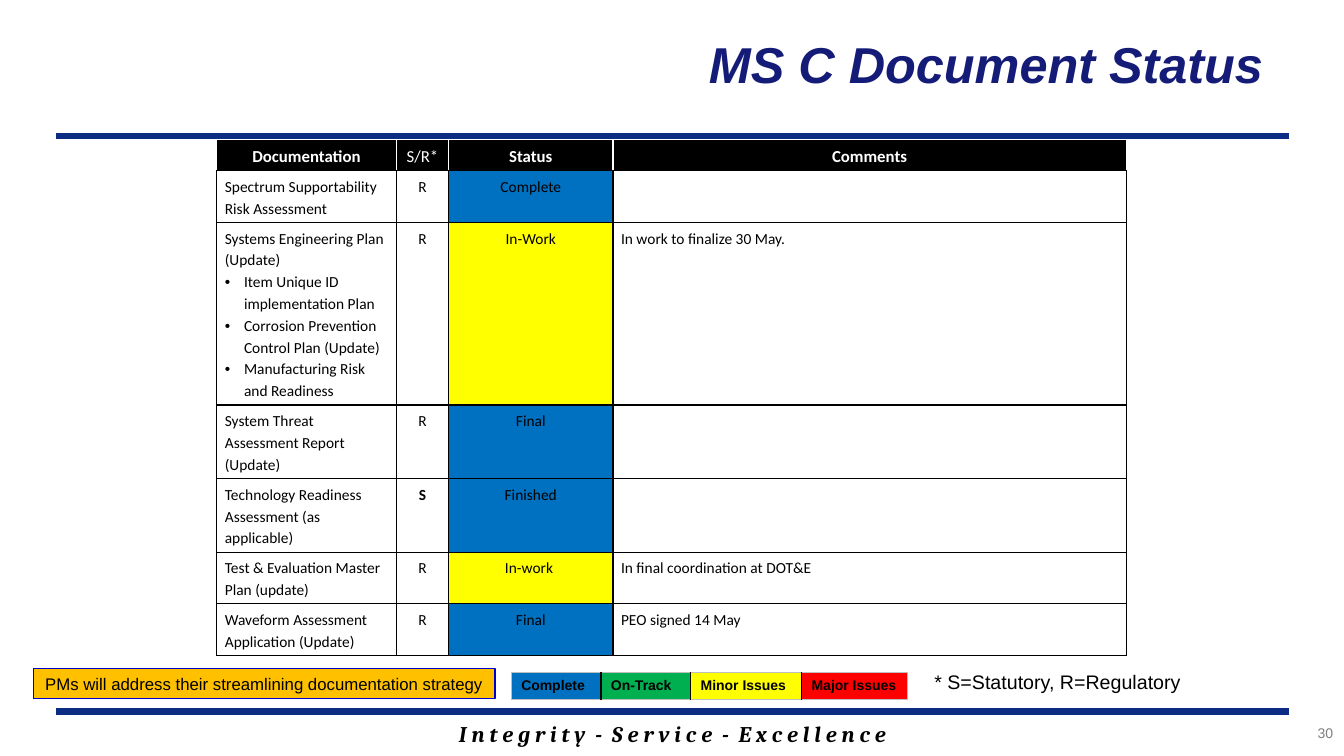
from dataclasses import dataclass

from lxml import etree
from pptx import Presentation
from pptx.dml.color import RGBColor
from pptx.enum.shapes import MSO_CONNECTOR, MSO_SHAPE
from pptx.enum.text import MSO_ANCHOR, PP_ALIGN
from pptx.oxml.ns import qn
from pptx.util import Inches, Pt

LEFT, CENTER, RIGHT = PP_ALIGN.LEFT, PP_ALIGN.CENTER, PP_ALIGN.RIGHT
MIDDLE = MSO_ANCHOR.MIDDLE
STRAIGHT = MSO_CONNECTOR.STRAIGHT
RECTANGLE = MSO_SHAPE.RECTANGLE

BLACK = RGBColor(0x00, 0x00, 0x00)
WHITE = RGBColor(0xFF, 0xFF, 0xFF)
NAVY = RGBColor(0x15, 0x1C, 0x77)
RULE_BLUE = RGBColor(0x0C, 0x2D, 0x83)
NOTE_BLUE = RGBColor(0x00, 0x00, 0xCC)
BLUE = RGBColor(0x00, 0x70, 0xC0)
GREEN = RGBColor(0x00, 0xB0, 0x50)
YELLOW = RGBColor(0xFF, 0xFF, 0x00)
RED = RGBColor(0xFF, 0x00, 0x00)
AMBER = RGBColor(0xFF, 0xC0, 0x00)
GRAY = RGBColor(0x7F, 0x7F, 0x7F)
EDGE_GRAY = RGBColor(0xBF, 0xBF, 0xBF)


@dataclass
class Style:
    size: float
    color: RGBColor = BLACK
    bold: bool = False
    italic: bool = False
    font: str = "Arial"
    align: PP_ALIGN = LEFT


@dataclass
class Document:
    name: str
    kind: str
    status: str
    color: RGBColor
    height: float
    comment: str = ""
    bullets: tuple[str, ...] = ()


@dataclass
class Label:
    text: str
    left: float
    top: float
    width: float
    height: float
    style: Style
    wrap: bool = True


DOCUMENTS = [
    Document("Spectrum Supportability Risk Assessment", "R", "Complete", BLUE, 0.48),
    Document("Systems Engineering Plan (Update)", "R", "In-Work", YELLOW, 1.72,
             "In work to finalize 30 May.",
             ("Item Unique ID implementation Plan",
              "Corrosion Prevention Control Plan (Update)",
              "Manufacturing Risk and Readiness")),
    Document("System Threat Assessment Report (Update)", "R", "Final", BLUE, 0.69),
    Document("Technology Readiness Assessment (as applicable)", "S", "Finished", BLUE, 0.69),
    Document("Test & Evaluation Master Plan (update)", "R", "In-work ", YELLOW, 0.48,
             "In final coordination at DOT&E"),
    Document("Waveform Assessment Application (Update)", "R", "Final", BLUE, 0.48,
             "PEO signed 14 May"),
]
HEADERS = ["Documentation", "S/R*", "Status", "Comments"]
LEGEND = [("Complete", BLUE), ("On-Track", GREEN),
          ("Minor Issues", YELLOW), ("Major Issues", RED)]
LABELS = [
    Label("I n t e g r i t y  -  S e r v i c e  -  E x c e l l e n c e", 1.89, 7.1, 9.56, 0.37,
          Style(16, bold=True, italic=True, font="Cambria", align=CENTER)),
    Label("* S=Statutory, R=Regulatory", 9.16, 6.6, 2.66, 0.34, Style(14, align=CENTER), False),
    Label("30", 11.65, 7.14, 1.67, 0.33, Style(10, GRAY, align=RIGHT)),
]


def style_text(frame, style: Style) -> None:
    for para in frame.paragraphs:
        para.alignment = style.align
        for span in para.runs:
            span.font.name = style.font
            span.font.size = Pt(style.size)
            span.font.bold = style.bold
            span.font.italic = style.italic
            span.font.color.rgb = style.color


def add_rule(page, top: float) -> None:
    rule = page.shapes.add_connector(
        STRAIGHT, Inches(0.56), Inches(top), Inches(12.78), Inches(top))
    rule.line.color.rgb = RULE_BLUE
    rule.line.width = Pt(4.5)
    etree.SubElement(rule._element.spPr, qn("a:effectLst"))


def add_label(page, label: Label) -> None:
    box = page.shapes.add_textbox(Inches(label.left), Inches(label.top),
                                  Inches(label.width), Inches(label.height))
    box.text_frame.word_wrap = label.wrap
    box.text_frame.text = label.text
    style_text(box.text_frame, label.style)


def add_grid(page, left: float, top: float, widths: list[float], heights: list[float]):
    table = page.shapes.add_table(
        len(heights), len(widths), Inches(left), Inches(top),
        Inches(sum(widths)), Inches(sum(heights))).table
    table.first_row = table.horz_banding = False
    for column, width in zip(table.columns, widths):
        column.width = Inches(width)
    for row, height in zip(table.rows, heights):
        row.height = Inches(height)
    return table


def fill_cell(cell, text: str, style: Style, fill: RGBColor | None,
              borders: dict[str, RGBColor], side_inset: float, edge_inset: float) -> None:
    cell.margin_left = cell.margin_right = Inches(side_inset)
    cell.margin_top = cell.margin_bottom = Inches(edge_inset)
    cell.text_frame.text = text
    style_text(cell.text_frame, style)
    properties = cell._tc.get_or_add_tcPr()
    for side in "LRTB":
        line = etree.SubElement(properties, qn(f"a:ln{side}"), w=str(Pt(1)))
        solid = etree.SubElement(line, qn("a:solidFill"))
        etree.SubElement(solid, qn("a:srgbClr"), val=str(borders[side]))
    if fill is None:
        cell.fill.background()
    else:
        cell.fill.solid()
        cell.fill.fore_color.rgb = fill


def add_bullet(para) -> None:
    properties = para._p.get_or_add_pPr()
    properties.set("marL", str(Inches(0.19)))
    properties.set("indent", str(-Inches(0.19)))
    etree.SubElement(properties, qn("a:buFont"), typeface="Arial")
    etree.SubElement(properties, qn("a:buChar"), char="•")


def add_status_table(page) -> None:
    heights = [0.29] + [document.height for document in DOCUMENTS]
    table = add_grid(page, 2.15, 1.38, [1.78, 0.52, 1.63, 5.09], heights)
    header_borders = dict(L=WHITE, R=WHITE, T=WHITE, B=BLACK)
    for cell, text in zip(table.rows[0].cells, HEADERS):
        style = Style(12, WHITE, bold=text != "S/R*", font="Calibri", align=CENTER)
        fill_cell(cell, text, style, BLACK, header_borders, 0.08, 0.04)
        cell.text_frame.paragraphs[0].line_spacing = 1.15
        cell.text_frame.paragraphs[0].space_after = Pt(10)
    for row, document in enumerate(DOCUMENTS, start=1):
        values = [
            ("\n".join((document.name, *document.bullets)), LEFT, None),
            (document.kind, CENTER, None),
            (document.status, CENTER, document.color),
            (document.comment, LEFT, None),
        ]
        for cell, (text, align, fill) in zip(table.rows[row].cells, values):
            style = Style(11, bold=text == "S", font="Calibri", align=align)
            fill_cell(cell, text, style, fill, dict.fromkeys("LRTB", BLACK), 0.08, 0.04)
            for para in cell.text_frame.paragraphs:
                para.line_spacing = 1.15
        for para in table.cell(row, 0).text_frame.paragraphs[1:]:
            add_bullet(para)


def add_legend(page) -> None:
    table = add_grid(page, 5.07, 6.67, [0.89, 0.89, 1.1, 1.05], [0.27])
    last = len(LEGEND) - 1
    for column, (text, color) in enumerate(LEGEND):
        borders = dict(L=BLACK if column else EDGE_GRAY,
                       R=BLACK if column < last else EDGE_GRAY, T=EDGE_GRAY, B=EDGE_GRAY)
        fill_cell(table.cell(0, column), text, Style(10, bold=True), color, borders, 0.1, 0.05)


def add_note(page) -> None:
    note = page.shapes.add_shape(RECTANGLE, Inches(0.33), Inches(6.63), Inches(4.58), Inches(0.3))
    note.shadow.inherit = False
    note.fill.solid()
    note.fill.fore_color.rgb = AMBER
    note.line.color.rgb = NOTE_BLUE
    note.line.width = Pt(0.75)
    note.text_frame.word_wrap = False
    note.text_frame.text = "PMs will address their streamlining documentation strategy"
    style_text(note.text_frame, Style(12, align=CENTER))


def main() -> None:
    deck = Presentation()
    deck.slide_width, deck.slide_height = Inches(13.33), Inches(7.5)
    page = deck.slides.add_slide(deck.slide_layouts[5])

    # Rules and title
    for top in (7.06, 1.35):
        add_rule(page, top)
    title = page.shapes.title
    title.left, title.top = Inches(4.63), Inches(0)
    title.width, title.height = Inches(8.14), Inches(1.25)
    title.text_frame.text = "MS C Document Status "
    title.text_frame.vertical_anchor = MIDDLE
    style_text(title.text_frame, Style(36, NAVY, bold=True, italic=True, align=RIGHT))

    # Status table, legend and notes
    add_status_table(page)
    add_legend(page)
    add_note(page)
    for label in LABELS:
        add_label(page, label)

    deck.save("out.pptx")


if __name__ == "__main__":
    main()
